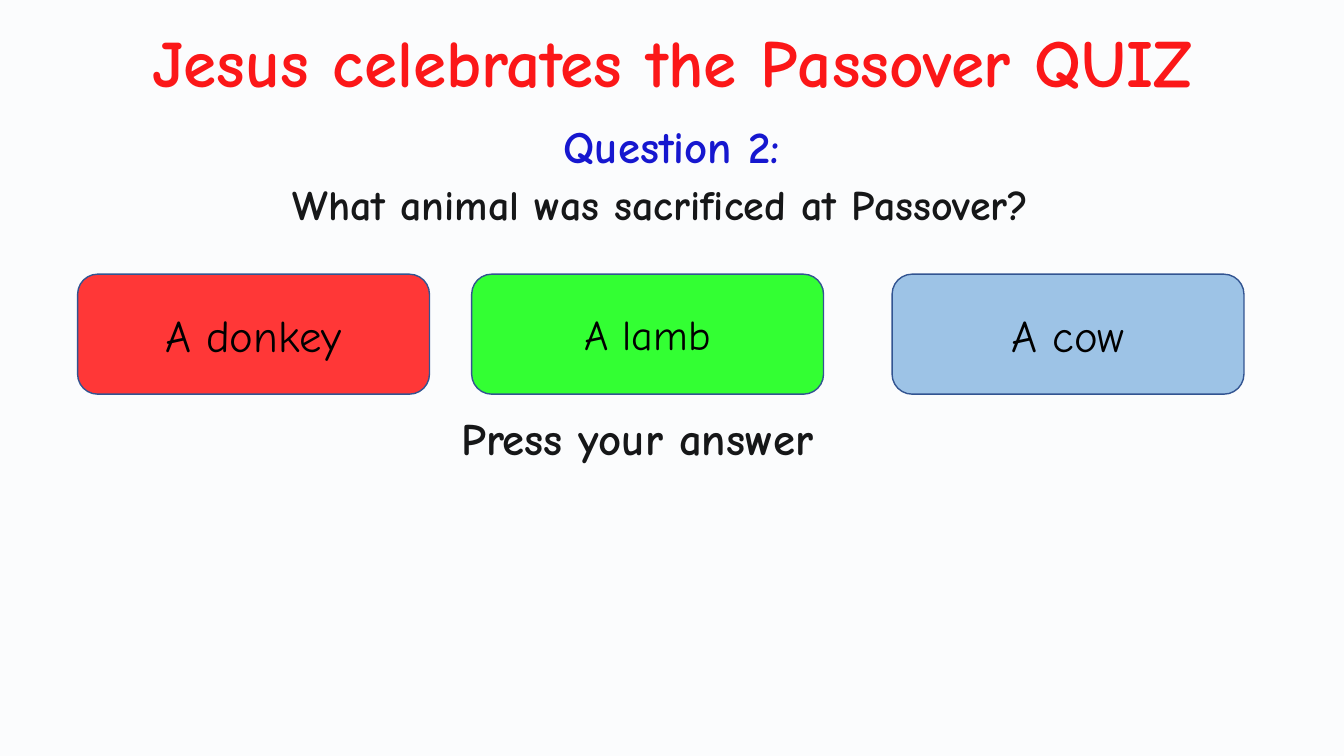
from dataclasses import dataclass, field

import pptx
import pptx.dml.color
import pptx.enum.shapes
import pptx.enum.text
import pptx.oxml
import pptx.oxml.ns
import pptx.util

Pt = pptx.util.Pt
Align = pptx.enum.text.PP_ALIGN
Fit = pptx.enum.text.MSO_AUTO_SIZE
Kind = pptx.enum.shapes.MSO_SHAPE
WIDE, HIGH = pptx.util.Inches(40 / 3), pptx.util.Inches(7.5)


@dataclass(frozen=True)
class Theme:
    font: str = "Comic Neue"
    ink: str = "000000"
    title: str = "FF0000"
    label: str = "0000CC"
    edge: str = "325491"
    veil: str = "DAE3F3"
    red: str = "FF3737"
    green: str = "33FF33"
    blue: str = "9DC3E6"
    page: str = "FFFFFF"
    huge: int = 48
    large: int = 32
    body: int = 30
    rule: int = 1


THEME = Theme()


@dataclass(frozen=True)
class Box:
    """A frame in per cent of the slide's width and height."""
    left: float
    top: float
    width: float
    height: float

    def place(self) -> list[int]:
        pairs = ((self.left, WIDE), (self.top, HIGH), (self.width, WIDE), (self.height, HIGH))
        return [round(share * full / 100) for share, full in pairs]


@dataclass(frozen=True)
class Line:
    text: str
    box: Box
    size: int
    color: str = THEME.ink
    frame: dict = field(default_factory=dict)
    para: dict = field(default_factory=dict)


@dataclass(frozen=True)
class Choice:
    text: str
    left: float
    fill: str
    size: int = THEME.large


MID = {"alignment": Align.CENTER}
GROW = {"auto_size": Fit.SHAPE_TO_FIT_TEXT}
LINES = [
    Line("Jesus celebrates the Passover QUIZ", Box(3.6, 2, 92.87, 12.13), THEME.huge,
         THEME.title, GROW | {"word_wrap": False}, MID),
    Line("What animal was sacrificed at Passover?", Box(5.78, 24.13, 86.78, 9.6), THEME.body,
         para=MID | {"line_spacing": Pt(30), "space_before": Pt(10)}),
    Line("Press your answer", Box(33.6, 54.53, 50.48, 9.6), THEME.large,
         para={"line_spacing": 0.9, "space_before": Pt(7.5)}),
    Line("Question 2:", Box(33.45, 15.07, 33.08, 8.53), THEME.large,
         THEME.label, GROW, MID),
]
CHOICES = [
    Choice("A donkey", 5.78, THEME.red),
    Choice("A lamb", 35.1, THEME.green, THEME.body),
    Choice("A cow", 66.38, THEME.blue),
]
VEIL = Box(-2.1, -10, 106.43, 116.4)


def apply(item, style: dict) -> None:
    for name, value in style.items():
        setattr(item, name, value)


def tint(code: str) -> pptx.dml.color.RGBColor:
    return pptx.dml.color.RGBColor.from_string(code)


def write(frame, text: str, size: int, color: str, bold: bool, para: dict) -> None:
    first = frame.paragraphs[0]
    apply(first, para)
    run = first.add_run()
    run.text = text
    apply(run.font, {"name": THEME.font, "size": Pt(size), "bold": bold})
    run.font.color.rgb = tint(color)


def add_line(slide, line: Line) -> None:
    frame = slide.shapes.add_textbox(*line.box.place()).text_frame
    apply(frame, {"word_wrap": True} | line.frame)
    write(frame, line.text, line.size, line.color, True, line.para)


def add_panel(slide, kind, box: Box, fill: str):
    panel = slide.shapes.add_shape(kind, *box.place())
    panel.shadow.inherit = False
    panel.fill.solid()
    panel.fill.fore_color.rgb = tint(fill)
    panel.line.color.rgb = tint(THEME.edge)
    panel.line.width = Pt(THEME.rule)
    return panel


def add_veil(slide) -> None:
    """Lay a pale tint, 10 per cent opaque, over the slide."""
    veil = add_panel(slide, Kind.RECTANGLE, VEIL, THEME.veil)
    path = pptx.oxml.ns.qn("a:solidFill") + "/" + pptx.oxml.ns.qn("a:srgbClr")
    color = veil.element.spPr.find(path)
    space = pptx.oxml.ns.nsdecls("a")
    color.append(pptx.oxml.parse_xml(f'<a:alpha {space} val="10000"/>'))


def add_choice(slide, choice: Choice) -> None:
    box = Box(choice.left, 36.27, 26.18, 15.87)
    frame = add_panel(slide, Kind.ROUNDED_RECTANGLE, box, choice.fill).text_frame
    apply(frame, {"word_wrap": True, "vertical_anchor": pptx.enum.text.MSO_ANCHOR.MIDDLE})
    write(frame, choice.text, choice.size, THEME.ink, False, MID)


def main() -> None:
    deck = pptx.Presentation()
    apply(deck, {"slide_width": WIDE, "slide_height": HIGH})
    slide = deck.slides.add_slide(deck.slide_layouts[6])
    slide.background.fill.solid()
    slide.background.fill.fore_color.rgb = tint(THEME.page)
    for line in LINES:
        add_line(slide, line)
    add_veil(slide)
    for choice in CHOICES:
        add_choice(slide, choice)
    deck.save("out.pptx")


if __name__ == "__main__":
    main()
